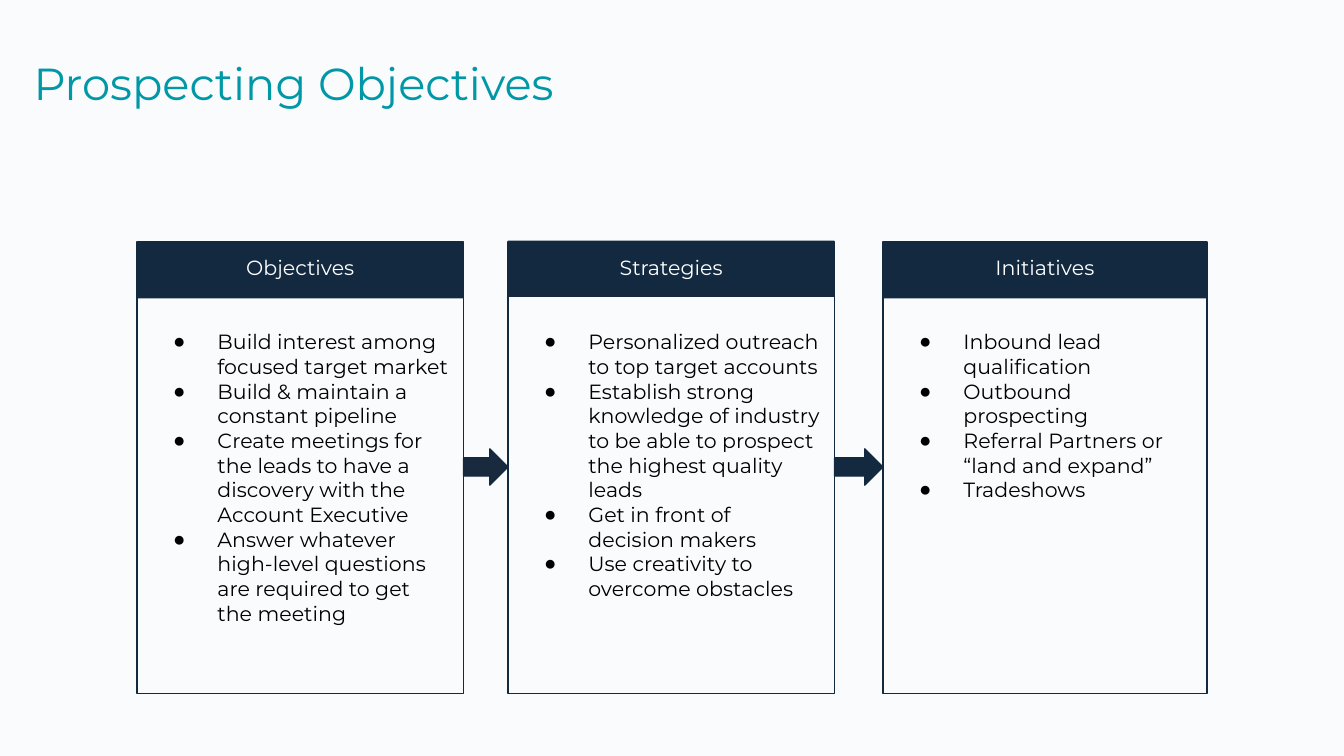
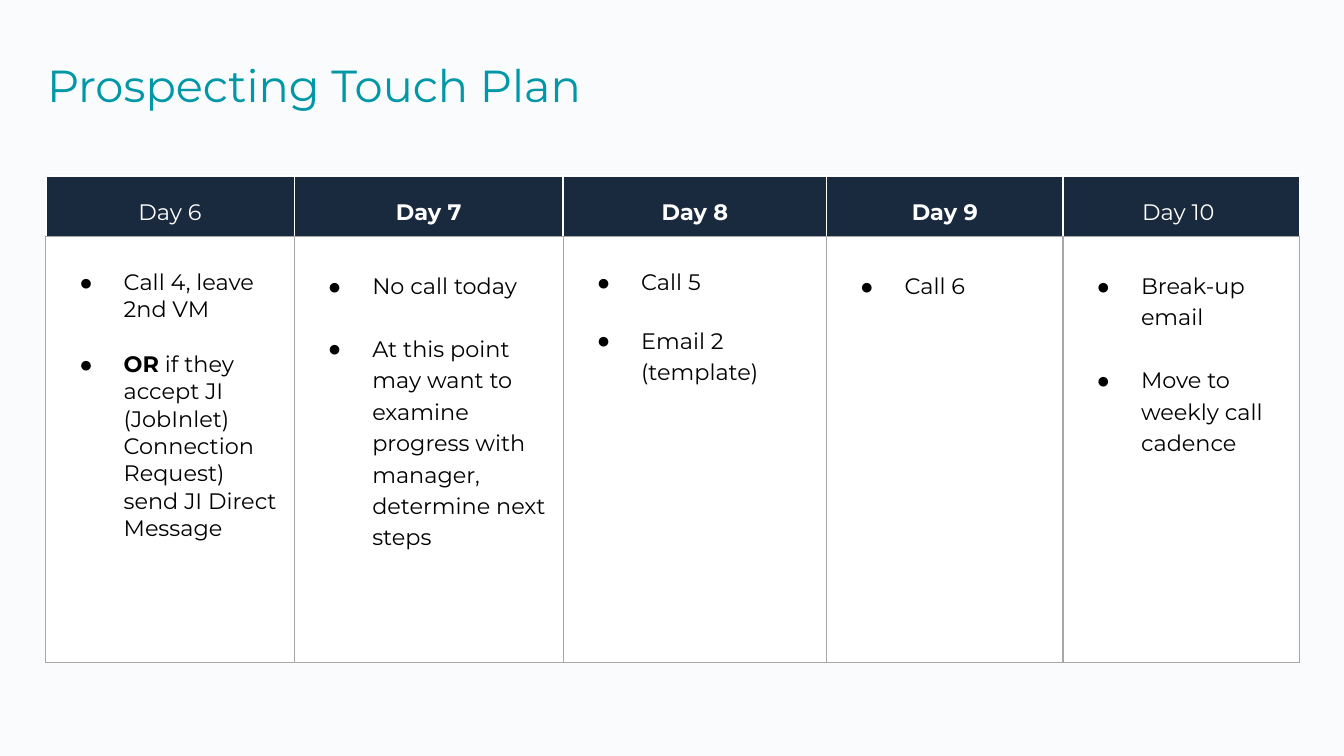
"""Build two sales prospecting slides: objectives flow and touch plan."""
from itertools import pairwise

from lxml import etree
from pptx import Presentation, util as u
from pptx.dml import color
from pptx.enum import shapes, text
from pptx.oxml import ns

COLORS = {
    "background": "FAFBFC",
    "title": "0097A7",
    "navy": "132940",
    "slate": "19293E",
    "grid": "A7A7A7",
    "white": "FFFFFF",
    "black": "000000",
}
FONT = "Montserrat"
BULLET_FONT = "Arial"
TABLE_LINE = 14.6


def rgb(name):
    return color.RGBColor.from_string(COLORS[name])


def write(paragraph, words, size=11, ink="black", bold=False, align=None,
          spacing=None, before=0, after=0, bullet=False):
    run = paragraph.add_run()
    run.text = words
    run.font.name = FONT
    run.font.size = u.Pt(size)
    run.font.bold = bold
    run.font.color.rgb = rgb(ink)
    paragraph.space_before = u.Pt(before)
    paragraph.space_after = u.Pt(after)
    if align is not None:
        paragraph.alignment = align
    if spacing:
        paragraph.line_spacing = spacing
    if bullet:
        add_bullet(paragraph)


def add_bullet(paragraph):
    properties = paragraph._p.get_or_add_pPr()
    properties.set("marL", str(u.Inches(0.5)))
    properties.set("indent", str(u.Inches(-0.33)))
    bullet_color = etree.SubElement(properties, ns.qn("a:buClr"))
    etree.SubElement(bullet_color, ns.qn("a:srgbClr"), val=COLORS["black"])
    etree.SubElement(properties, ns.qn("a:buFont"), typeface=BULLET_FONT)
    etree.SubElement(properties, ns.qn("a:buChar"), char="●")


def set_insets(target, left, top, right, bottom):
    target.margin_left, target.margin_top = u.Inches(left), u.Inches(top)
    target.margin_right, target.margin_bottom = u.Inches(right), u.Inches(bottom)


def set_borders(cell, left, right, top, bottom):
    properties = cell._tc.get_or_add_tcPr()
    sides = zip(("lnL", "lnR", "lnT", "lnB"), (left, right, top, bottom))
    for index, (tag, (name, width)) in enumerate(sides):
        line = etree.Element(ns.qn(f"a:{tag}"), w=str(u.Pt(width)))
        fill = etree.SubElement(line, ns.qn("a:solidFill"))
        etree.SubElement(fill, ns.qn("a:srgbClr"), val=COLORS[name])
        properties.insert(index, line)


class Deck:
    def __init__(self):
        self.presentation = Presentation()
        self.presentation.slide_width = u.Inches(10)
        self.presentation.slide_height = u.Inches(10 * 9 / 16)
        background = self.presentation.slide_master.background.fill
        background.solid()
        background.fore_color.rgb = rgb("background")
        self.slide = None

    def add_slide(self, title, width, inset, anchor):
        layout = self.presentation.slide_layouts[5]
        self.slide = self.presentation.slides.add_slide(layout)
        shape = self.slide.shapes.title
        shape.left, shape.top = u.Inches(0.25), u.Inches(0.33)
        shape.width, shape.height = u.Inches(width), u.Inches(0.57)
        frame = shape.text_frame
        frame.auto_size = text.MSO_AUTO_SIZE.NONE
        frame.vertical_anchor = anchor
        set_insets(frame, inset, inset, inset, inset)
        write(frame.paragraphs[0], title, size=24, ink="title",
              align=text.PP_ALIGN.LEFT)

    def add_shape(self, kind, left, top, width, height, fill=None, line=None):
        shape = self.slide.shapes.add_shape(
            kind, u.Inches(left), u.Inches(top), u.Inches(width), u.Inches(height))
        shape.shadow.inherit = False
        if fill:
            shape.fill.solid()
            shape.fill.fore_color.rgb = rgb(fill)
        else:
            shape.fill.background()
        if line:
            shape.line.color.rgb = rgb(line)
            shape.line.width = u.Pt(0.75)
        else:
            shape.line.fill.background()
        return shape

    def add_card(self, left, width, band_top, heading, bullets):
        rectangle = shapes.MSO_SHAPE.RECTANGLE
        self.add_shape(rectangle, left, band_top, width, 0.42, fill="navy")
        card = self.add_shape(rectangle, left, 1.8, width, 3.36, line="navy")
        frame = card.text_frame
        frame.word_wrap = True
        frame.vertical_anchor = text.MSO_ANCHOR.TOP
        set_insets(frame, 0.1, 0.1, 0.1, 0.1)
        write(frame.paragraphs[0], heading, ink="white", after=26.5,
              align=text.PP_ALIGN.CENTER)
        for bullet in bullets:
            write(frame.add_paragraph(), bullet, bullet=True,
                  align=text.PP_ALIGN.LEFT)

    def add_arrow(self, left, right, fill):
        self.add_shape(shapes.MSO_SHAPE.RIGHT_ARROW, left, 3.34, right - left, 0.27,
                       fill=fill, line="navy")

    def add_day_table(self, left, top, widths, heights, days):
        table = self.slide.shapes.add_table(
            len(heights), len(widths), u.Inches(left), u.Inches(top),
            u.Inches(sum(widths)), u.Inches(sum(heights))).table
        table.first_row = table.horz_banding = False
        for row, height in zip(table.rows, heights):
            row.height = u.Inches(height)
        for index, (width, day) in enumerate(zip(widths, days)):
            table.columns[index].width = u.Inches(width)
            heading, bold, bullets = day
            self.fill_heading(table.cell(0, index), heading, bold)
            self.fill_steps(table.cell(1, index), bullets)

    def fill_heading(self, cell, heading, bold):
        self.paint_cell(cell, "slate")
        white = ("white", 1)
        set_borders(cell, white, white, white, ("grid", 0.75))
        set_insets(cell, 0.08, 0.14, 0.08, 0.04)
        write(cell.text_frame.paragraphs[0], heading, size=12, ink="white",
              bold=bold, spacing=1.15, align=text.PP_ALIGN.CENTER)

    def fill_steps(self, cell, bullets):
        self.paint_cell(cell, "white")
        set_borders(cell, *[("grid", 0.75)] * 4)
        set_insets(cell, 0.08, 0.24, 0.08, 0.04)
        gap = TABLE_LINE * bullets[0][0]
        frame = cell.text_frame
        for index, (spacing, lead, words) in enumerate(bullets):
            paragraph = frame.add_paragraph() if index else frame.paragraphs[0]
            if lead:
                write(paragraph, lead, size=12, bold=True)
            write(paragraph, words, size=12, spacing=spacing,
                  before=gap if index else 0, bullet=True)

    def paint_cell(self, cell, fill):
        cell.fill.solid()
        cell.fill.fore_color.rgb = rgb(fill)


def build_objectives(deck):
    deck.add_slide("Prospecting Objectives", 9.12, 0, text.MSO_ANCHOR.MIDDLE)
    cards = [
        (1.02, 2.43, 1.8, "Objectives", [
            "Build interest among focused target market",
            "Build & maintain a constant pipeline",
            "Create meetings for the leads to have a discovery with the "
            "Account Executive",
            "Answer whatever high-level questions are required to get the meeting",
        ]),
        (3.78, 2.43, 1.79, "Strategies", [
            "Personalized outreach to top target accounts",
            "Establish strong knowledge of industry to be able to prospect "
            "the highest quality leads",
            "Get in front of decision makers",
            "Use creativity to overcome obstacles",
        ]),
        (6.57, 2.41, 1.8, "Initiatives", [
            "Inbound lead qualification",
            "Outbound prospecting",
            "Referral Partners or “land and expand”",
            "Tradeshows",
        ]),
    ]
    for card in cards:
        deck.add_card(*card)
    for (current, following), fill in zip(pairwise(cards), ("slate", "navy")):
        deck.add_arrow(current[0] + current[1], following[0], fill)


def build_touch_plan(deck):
    deck.add_slide("Prospecting Touch Plan", 8.46, 0.1, text.MSO_ANCHOR.TOP)
    days = [
        ("Day 6", False, [
            (1, "", "Call 4, leave 2nd VM"),
            (1, "OR", " if they accept JI (JobInlet) Connection Request) "
                      "send JI Direct Message"),
        ]),
        ("Day 7", True, [
            (1.15, "", "No call today"),
            (1.15, "", "At this point may want to examine progress with "
                       "manager, determine next steps"),
        ]),
        ("Day 8", True, [
            (1, "", "Call 5"),
            (1.15, "", "Email 2 (template)"),
        ]),
        ("Day 9", True, [(1.15, "", "Call 6")]),
        ("Day 10 ", False, [
            (1.15, "", "Break-up email"),
            (1.15, "", "Move to weekly call cadence"),
        ]),
    ]
    deck.add_day_table(0.34, 1.31, [1.85, 2, 1.96, 1.76, 1.76], [0.45, 3.17], days)


def main():
    deck = Deck()
    build_objectives(deck)
    build_touch_plan(deck)
    deck.presentation.save("out.pptx")


if __name__ == "__main__":
    main()
